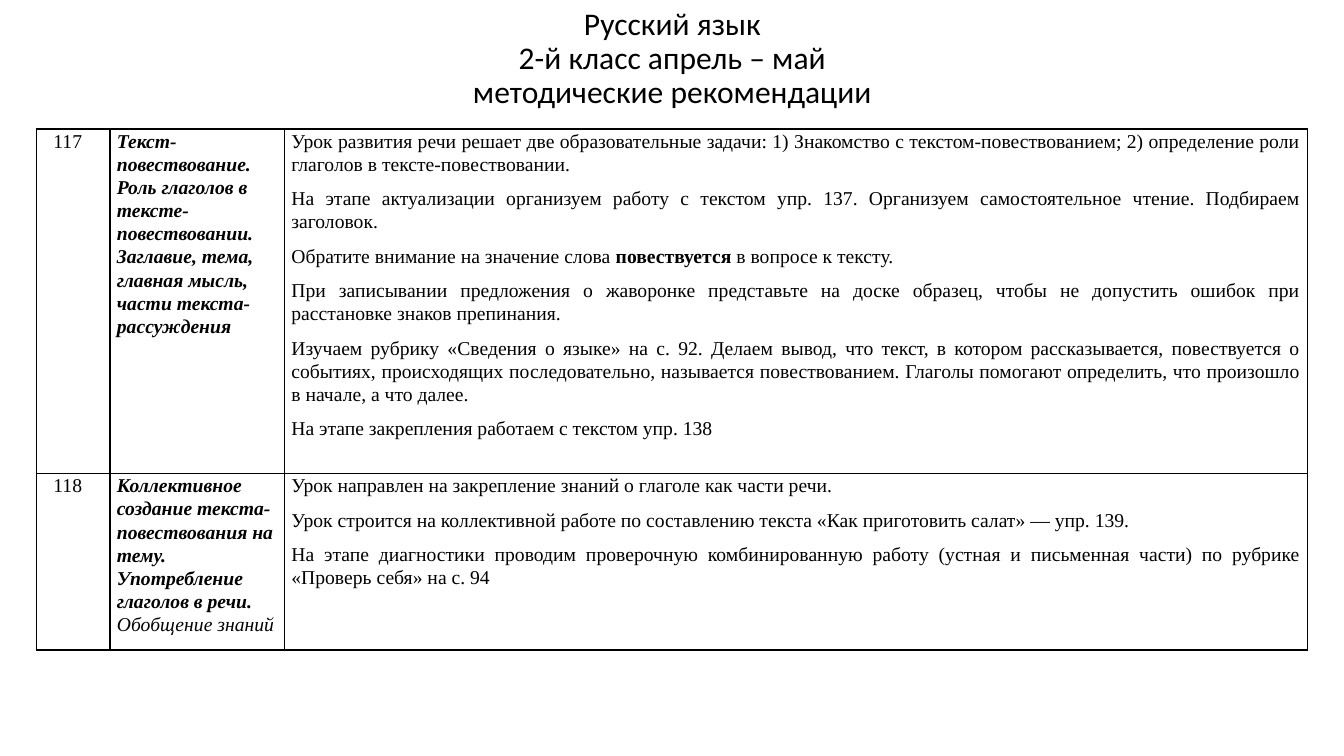
import pptx
import pptx.dml.color
import pptx.enum.text
import pptx.oxml
import pptx.oxml.ns
import pptx.util

BLACK = pptx.dml.color.RGBColor(0, 0, 0)
WHITE = pptx.dml.color.RGBColor(255, 255, 255)
ALIGN = pptx.enum.text.PP_ALIGN
ANCHOR = pptx.enum.text.MSO_ANCHOR
TERM = {"bold": True}
TOPIC = {"bold": True, "italic": True}
SUMMARY = {"italic": True}

HEADING = "Русский язык\n2-й класс апрель – май\nметодические рекомендации"

LESSONS = [
    (
        "117",
        [("Текст-повествование. Роль глаголов в тексте-повествовании. Заглавие, тема, "
          "главная мысль, части текста-рассуждения", TOPIC)],
        [
            [("Урок развития речи решает две образовательные задачи: 1) Знакомство с "
              "текстом-повествованием; 2) определение роли глаголов в тексте-повествовании.", {})],
            [("На этапе актуализации организуем работу с текстом упр. 137. Организуем "
              "самостоятельное чтение. Подбираем заголовок.", {})],
            [("Обратите внимание на значение слова ", {}), ("повествуется", TERM),
             (" в вопросе к тексту.", {})],
            [("При записывании предложения о жаворонке представьте на доске образец, чтобы "
              "не допустить ошибок при расстановке знаков препинания.", {})],
            [("Изучаем рубрику «Сведения о языке» на с. 92. Делаем вывод, что текст, в котором "
              "рассказывается, повествуется о событиях, происходящих последовательно, называется "
              "повествованием. Глаголы помогают определить, что произошло в начале, а что далее.", {})],
            [("На этапе закрепления работаем с текстом упр. 138", {})],
        ],
    ),
    (
        "118",
        [("Коллективное создание текста-повествования на тему. Употребление глаголов в речи.", TOPIC),
         (" Обобщение знаний", SUMMARY)],
        [
            [("Урок направлен на закрепление знаний о глаголе как части речи.", {})],
            [("Урок строится на коллективной работе по составлению текста "
              "«Как приготовить салат» — упр. 139.", {})],
            [("На этапе диагностики проводим проверочную комбинированную работу (устная и "
              "письменная части) по рубрике «Проверь себя» на с. 94", {})],
        ],
    ),
]


def apply(target, values):
    for name, value in values.items():
        setattr(target, name, value)


class LessonSlide:
    title_font = {"name": "Calibri", "size": pptx.util.Pt(22.5)}
    title_format = {"alignment": ALIGN.CENTER, "line_spacing": 0.9}
    cell_font = {"name": "Times New Roman", "size": pptx.util.Pt(14)}
    cell_format = {"line_spacing": 1.07, "space_after": pptx.util.Pt(8)}
    cell_margins = {"margin_left": pptx.util.Inches(0.07), "margin_right": pptx.util.Inches(0.07),
                    "margin_top": 0, "margin_bottom": 0}
    number_indent = pptx.util.Inches(0.1)
    border_width = pptx.util.Pt(1)

    def __init__(self, deck):
        self.deck = deck
        self.slide = deck.slides.add_slide(deck.slide_layouts[6])

    def across(self, percent):
        return round(self.deck.slide_width * percent / 100)

    def down(self, percent):
        return round(self.deck.slide_height * percent / 100)

    def fill_text(self, frame, paragraphs, font, layout):
        for index, runs in enumerate(paragraphs):
            paragraph = frame.paragraphs[0] if index == 0 else frame.add_paragraph()
            apply(paragraph, layout)
            for text, emphasis in runs:
                for line_index, line in enumerate(text.splitlines()):
                    if line_index:
                        paragraph.add_line_break()
                    run = paragraph.add_run()
                    run.text = line
                    apply(run.font, {**font, **emphasis})
                    run.font.color.rgb = BLACK

    def title(self, text, left, top, width, height):
        heading = self.slide.shapes.add_textbox(
            self.across(left), self.down(top), self.across(width), self.down(height))
        apply(heading.text_frame, {"word_wrap": True, "vertical_anchor": ANCHOR.MIDDLE})
        self.fill_text(heading.text_frame, [[(text, {})]], self.title_font, self.title_format)

    def border(self, cell):
        properties = cell._tc.get_or_add_tcPr()
        for position, side in enumerate(("lnL", "lnR", "lnT", "lnB")):
            properties.insert(position, pptx.oxml.parse_xml(
                f'<a:{side} {pptx.oxml.ns.nsdecls("a")} w="{self.border_width}">'
                f'<a:solidFill><a:srgbClr val="{BLACK}"/></a:solidFill></a:{side}>'))

    def cell(self, cell, paragraphs, layout):
        apply(cell, self.cell_margins)
        cell.fill.solid()
        cell.fill.fore_color.rgb = WHITE
        self.border(cell)
        self.fill_text(cell.text_frame, paragraphs, self.cell_font, {**self.cell_format, **layout})

    def lesson_table(self, lessons, left, top, widths, heights):
        plan = self.slide.shapes.add_table(
            len(heights), len(widths), self.across(left), self.down(top),
            self.across(sum(widths)), self.down(sum(heights))).table
        apply(plan, {"first_row": False, "horz_banding": False})
        for column, width in zip(plan.columns, widths):
            column.width = self.across(width)
        for row, height, (number, topic, advice) in zip(plan.rows, heights, lessons):
            row.height = self.down(height)
            number_cell, topic_cell, advice_cell = row.cells
            self.cell(number_cell, [[(number, {})]], {})
            indent = number_cell.text_frame.paragraphs[0]._p.get_or_add_pPr()
            indent.set("marL", str(self.number_indent))
            self.cell(topic_cell, [topic], {})
            self.cell(advice_cell, advice, {"alignment": ALIGN.JUSTIFY})


def main():
    deck = pptx.Presentation()
    apply(deck, {"slide_width": pptx.util.Inches(13.33), "slide_height": pptx.util.Inches(7.5)})
    page = LessonSlide(deck)
    page.title(HEADING, 6.9, 1.07, 86.27, 13.6)
    page.lesson_table(LESSONS, 2.7, 17.07, (5.48, 12.98, 76.14), (45.6, 21.5))
    deck.save("out.pptx")


if __name__ == "__main__":
    main()
